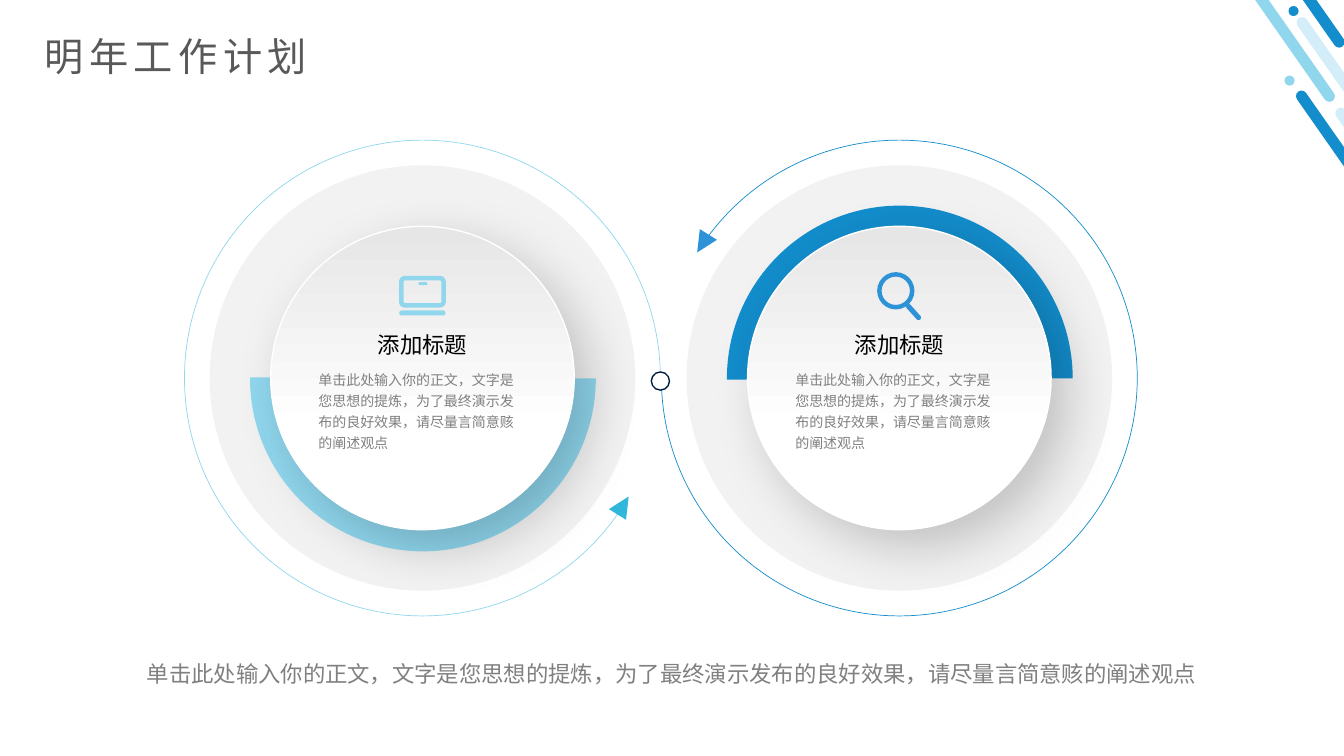
import pptx
import pptx.dml.color
import pptx.enum.shapes
import pptx.enum.text
import pptx.oxml
import pptx.oxml.ns
import pptx.util

SHAPE = pptx.enum.shapes.MSO_SHAPE
ALIGN = pptx.enum.text.PP_ALIGN
ANCHOR = pptx.enum.text.MSO_ANCHOR
FONT = "Noto Sans CJK SC"
W, H = 13.33, 7.5
SKY, BLUE, PALE, GREY = "90D7EE", "138DCC", "D3EEF9", "808080"
RING = 4.72
BODY = "单击此处输入你的正文，文字是您思想的提炼，为了最终演示发布的良好效果，请尽量言简意赅的阐述观点"


def color(value):
    return pptx.dml.color.RGBColor.from_string(value)


def place(sp, x, y, w, h):
    sp.left, sp.top, sp.width, sp.height = map(pptx.util.Inches, (x, y, w, h))


def draw(slide, kind, x, y, w, h, fill=None, line=None, weight=1, rot=0, adj=()):
    sp = slide.shapes.add_shape(kind, *map(pptx.util.Inches, (x, y, w, h)))
    sp.shadow.inherit = False
    sp.rotation = rot
    for i, value in enumerate(adj):
        sp.adjustments[i] = value
    if fill:
        sp.fill.solid()
        sp.fill.fore_color.rgb = color(fill)
    else:
        sp.fill.background()
    if line:
        sp.line.color.rgb = color(line)
        sp.line.width = pptx.util.Pt(weight)
    else:
        sp.line.fill.background()
    return sp


def disc(slide, cx, cy, d, **look):
    return draw(slide, SHAPE.OVAL, cx - d / 2, cy - d / 2, d, d, **look)


def write(sp, text, size, fill, align=ALIGN.LEFT, anchor=ANCHOR.TOP, wrap=True,
          leading=None, tracking=None):
    tf = sp.text_frame
    tf.word_wrap = wrap
    tf.vertical_anchor = anchor
    tf.auto_size = pptx.enum.text.MSO_AUTO_SIZE.NONE
    p = tf.paragraphs[0]
    p.alignment = align
    if leading:
        p.line_spacing = leading
    r = p.add_run()
    r.text = text
    r.font.size = pptx.util.Pt(size)
    r.font.name = FONT
    r.font.color.rgb = color(fill)
    rpr = r.font._element
    ea = pptx.oxml.parse_xml(f'<a:ea {pptx.oxml.ns.nsdecls("a")} typeface="{FONT}"/>')
    rpr.find(pptx.oxml.ns.qn("a:latin")).addnext(ea)
    if tracking:
        rpr.set("spc", str(tracking * 100))


def label(slide, x, y, w, h, text, size, fill, **fmt):
    sp = slide.shapes.add_textbox(*map(pptx.util.Inches, (x, y, w, h)))
    write(sp, text, size, fill, **fmt)


def raise_button(sp):
    """Give a disc its vertical gradient and soft shadow."""
    sp.fill.gradient()
    sp.fill.gradient_angle = 270
    for stop, (pos, value) in zip(sp.fill.gradient_stops, ((0, "E6E6E6"), (0.67, "FFFFFF"))):
        stop.position = pos
        stop.color.rgb = color(value)
    pt = pptx.util.Pt
    effects = sp._element.spPr.find(pptx.oxml.ns.qn("a:effectLst"))
    effects.append(pptx.oxml.parse_xml(
        f'<a:outerShdw {pptx.oxml.ns.nsdecls("a")} blurRad="{pt(38)}" dist="{pt(16)}" '
        f'dir="{45 * 60000}" algn="tl" rotWithShape="0"><a:srgbClr val="000000">'
        '<a:alpha val="20000"/></a:srgbClr></a:outerShdw>'))


def corner_stripes(slide):
    bars = ((13.45, 0.71, 2.19, BLUE), (13.84, 0.88, 2.19, PALE), (12.37, -1.51, 2.76, SKY),
            (13.62, -0.07, 2.76, PALE), (12.63, -1.53, 2.19, BLUE))
    for x, y, length, fill in bars:
        draw(slide, SHAPE.ROUNDED_RECTANGLE, x, y, 0.11, length, fill, rot=325, adj=(0.5,))
    for x, y, fill in ((12.74, 0.75, SKY), (12.78, 0.06, BLUE)):
        draw(slide, SHAPE.OVAL, x, y, 0.1, 0.1, fill)


def laptop_icon(slide, cx, cy, fill):
    bar = SHAPE.ROUNDED_RECTANGLE
    draw(slide, bar, cx - 0.21, cy - 0.18, 0.42, 0.27, line=fill, weight=3.2, adj=(0.13,))
    draw(slide, bar, cx - 0.23, cy + 0.14, 0.46, 0.05, fill, adj=(0.5,))
    draw(slide, bar, cx - 0.04, cy - 0.14, 0.09, 0.03, fill, adj=(0.5,))


def magnifier_icon(slide, cx, cy, fill):
    draw(slide, SHAPE.DONUT, cx - 0.22, cy - 0.24, 0.37, 0.37, fill, adj=(0.12,))
    draw(slide, SHAPE.ROUNDED_RECTANGLE, cx + 0.04, cy + 0.13, 0.2, 0.05, fill,
         rot=48, adj=(0.5,))


def plan_dial(slide, x, y, accent, half, sweep, icon, icon_fill):
    """Draw one ringed dial in the square of side RING at x, y."""
    cx, cy = x + RING / 2, y + RING / 2
    disc(slide, cx, cy, 4.22, fill="F2F2F2")
    draw(slide, SHAPE.PIE, cx - 1.71, cy - 1.71, 3.43, 3.43, accent, adj=half)
    raise_button(disc(slide, cx, cy, 3.01, fill="FFFFFF", line="FFFFFF"))
    draw(slide, SHAPE.ARC, x, y, RING, RING, line=accent, weight=0.5, adj=sweep)
    label(slide, cx - 1.13, cy - 0.15, 2.27, 0.96, BODY, 10, GREY, leading=1.24)
    label(slide, cx - 0.54, cy - 0.51, 1.09, 0.37, "添加标题", 16, "000000", wrap=False)
    icon(slide, cx, cy - 0.81, icon_fill)


def dial_pair(slide, x, y):
    """Draw both dials, the joint between them and their arrowheads."""
    plan_dial(slide, x, y, SKY, (0, 108.23), (20.73, 0), laptop_icon, SKY)
    plan_dial(slide, x + RING + 0.01, y, BLUE, (107.77, 0), (130.17, 108),
              magnifier_icon, "2D92D6")
    joint = x + RING
    disc(slide, joint, y + 2.39, 0.18, fill="FFFFFF", line="011D3E")
    for dx, dy, fill, rot in ((-0.47, 3.52, "31B7DA", 32), (0.32, 0.92, "2D92D6", 212)):
        draw(slide, SHAPE.ISOSCELES_TRIANGLE, joint + dx, y + dy, 0.2, 0.21, fill, rot=rot)


def main():
    prs = pptx.Presentation()
    prs.slide_width, prs.slide_height = pptx.util.Inches(W), pptx.util.Inches(H)
    slide = prs.slides.add_slide(prs.slide_layouts[5])
    corner_stripes(slide)
    title = slide.shapes.title
    place(title, 0.34, 0.27, 13.02 - 0.34, 0.57)
    write(title, "明年工作计划", 28, "595959", anchor=ANCHOR.MIDDLE, tracking=4)
    dial_pair(slide, 1.83, 1.39)
    label(slide, 0.92, 6.37, 11.49, 0.96, BODY, 16, GREY, align=ALIGN.CENTER, leading=1.5)
    prs.save("out.pptx")


if __name__ == "__main__":
    main()
